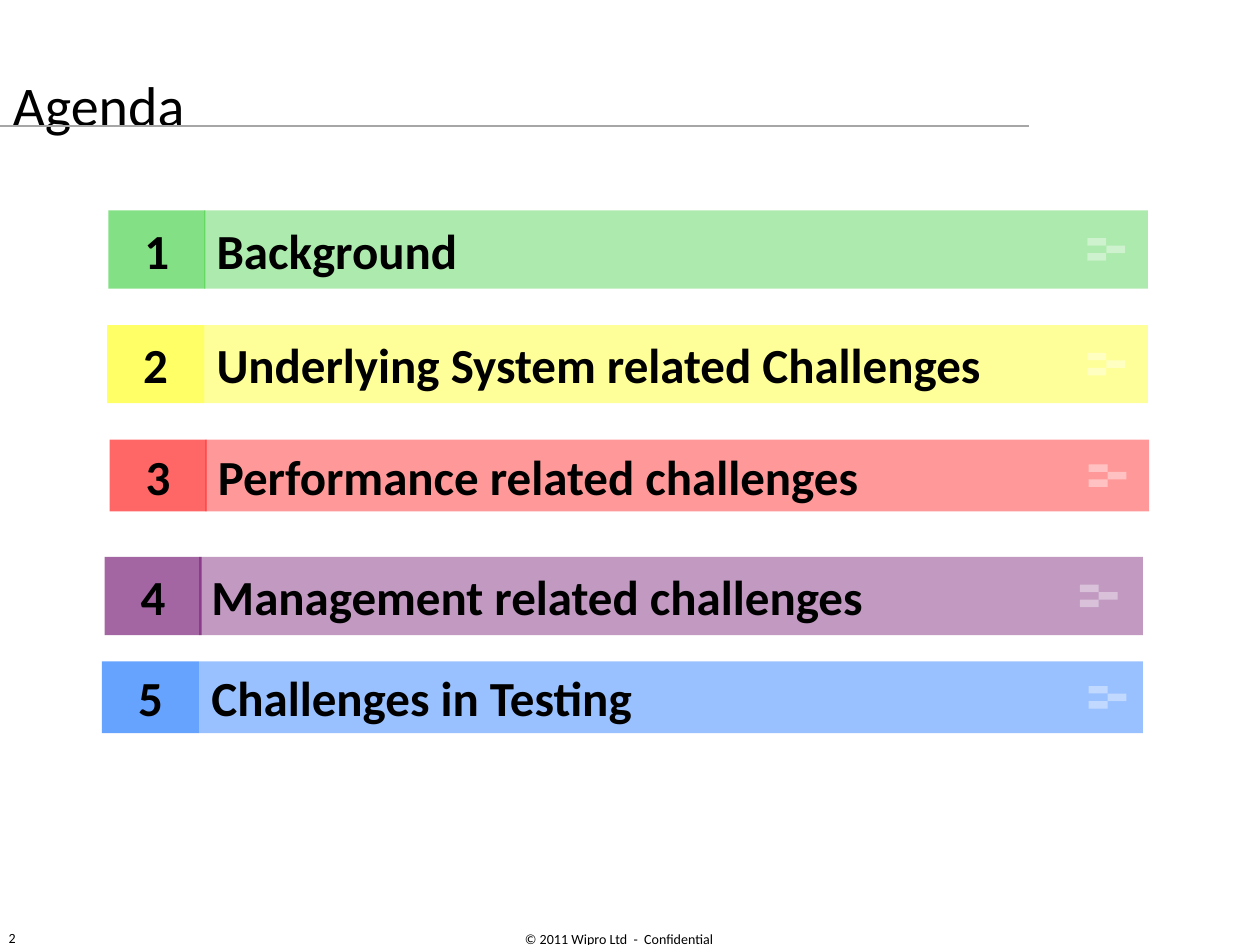
from dataclasses import dataclass

from lxml import etree
from pptx import Presentation
from pptx.dml.color import RGBColor
from pptx.enum.shapes import MSO_CONNECTOR, MSO_SHAPE
from pptx.enum.text import MSO_ANCHOR, PP_ALIGN
from pptx.oxml.ns import qn
from pptx.util import Inches, Pt

STRAIGHT = MSO_CONNECTOR.STRAIGHT
RECTANGLE = MSO_SHAPE.RECTANGLE
MIDDLE = MSO_ANCHOR.MIDDLE
LEFT, CENTER = PP_ALIGN.LEFT, PP_ALIGN.CENTER


@dataclass(frozen=True)
class Theme:
    font: str = "Calibri"
    ink: str = "000000"
    rule: str = "A6A6A6"
    mark: str = "FFFFFF"
    title_size: int = 32
    item_size: int = 28
    footer_size: int = 8
    number_alpha: int = 60
    band_alpha: int = 40


THEME = Theme()
NUMBER_WIDTH, BAND_WIDTH = 0.77, 7.49
MARK_WIDTH, MARK_HEIGHT = 0.15, 0.06

AGENDA = [
    ("Background", "33CC33", 0.86, 1.62, 1.67, 0.62, 8.63),
    ("Underlying System related Challenges", "FFFF00", 0.85, 1.62, 2.58, 0.62, 8.63),
    ("Performance related challenges", "FF0000", 0.87, 1.63, 3.49, 0.57, 8.64),
    ("Management related challenges", "660066", 0.83, 1.58, 4.42, 0.62, 8.57),
    ("Challenges in Testing", "0066FF", 0.81, 1.58, 5.25, 0.57, 8.64),
]


def write_text(box, text, *, size, bold=False, align=LEFT, wrap=True):
    frame = box.text_frame
    frame.word_wrap = wrap
    frame.vertical_anchor = MIDDLE
    para = frame.paragraphs[0]
    para.alignment = align
    span = para.add_run()
    span.text = text
    span.font.name = THEME.font
    span.font.size = Pt(size)
    span.font.bold = bold
    span.font.color.rgb = RGBColor.from_string(THEME.ink)


def add_title(slide, text):
    title = slide.shapes.title
    title.left, title.top = Inches(0), Inches(0.33)
    title.width, title.height = Inches(8.27), Inches(1)
    write_text(title, text, size=THEME.title_size)


def add_rule(slide):
    rule = slide.shapes.add_connector(STRAIGHT, Inches(0), Inches(1), Inches(8.17), Inches(1))
    rule.line.color.rgb = RGBColor.from_string(THEME.rule)
    rule.line.width = Pt(0.75)
    etree.SubElement(rule.element.spPr, qn("a:effectLst"))


def add_footer(slide, text, left, top, width, align=LEFT):
    box = slide.shapes.add_textbox(Inches(left), Inches(top), Inches(width), Inches(0.4))
    write_text(box, text, size=THEME.footer_size, align=align)


def add_block(slide, left, top, width, height, color, alpha):
    block = slide.shapes.add_shape(
        RECTANGLE, Inches(left), Inches(top), Inches(width), Inches(height)
    )
    block.shadow.inherit = False
    block.line.fill.background()
    block.fill.solid()
    block.fill.fore_color.rgb = RGBColor.from_string(color)
    color_element = block.element.spPr.find(qn("a:solidFill"))[0]
    etree.SubElement(color_element, qn("a:alpha"), val=str(alpha * 1000))
    return block


def add_marks(slide, left, top):
    for row, column in enumerate((0, 1, 0)):
        add_block(slide, left + column * MARK_WIDTH, top + row * MARK_HEIGHT,
                  MARK_WIDTH, MARK_HEIGHT, THEME.mark, THEME.band_alpha)


def add_item(slide, number, label, color, number_left, band_left, top, height, mark_left):
    number_block = add_block(slide, number_left, top, NUMBER_WIDTH, height,
                             color, THEME.number_alpha)
    write_text(number_block, str(number), size=THEME.item_size, bold=True,
               align=CENTER, wrap=False)
    band = add_block(slide, band_left, top, BAND_WIDTH, height, color, THEME.band_alpha)
    write_text(band, label, size=THEME.item_size, bold=True, wrap=False)
    add_marks(slide, mark_left, top + (height - 3 * MARK_HEIGHT) / 2)


def main():
    deck = Presentation()
    deck.slide_width, deck.slide_height = Inches(10), Inches(7.5)
    slide = deck.slides.add_slide(deck.slide_layouts.get_by_name("Title Only"))
    add_rule(slide)
    add_footer(slide, "© 2011 Wipro Ltd  -  Confidential", 2.75, 7.25, 4.33, CENTER)
    add_footer(slide, "2", -0.03, 7.24, 2.33)
    add_title(slide, "Agenda")
    for number, item in enumerate(AGENDA, start=1):
        add_item(slide, number, *item)
    deck.save("out.pptx")


if __name__ == "__main__":
    main()
